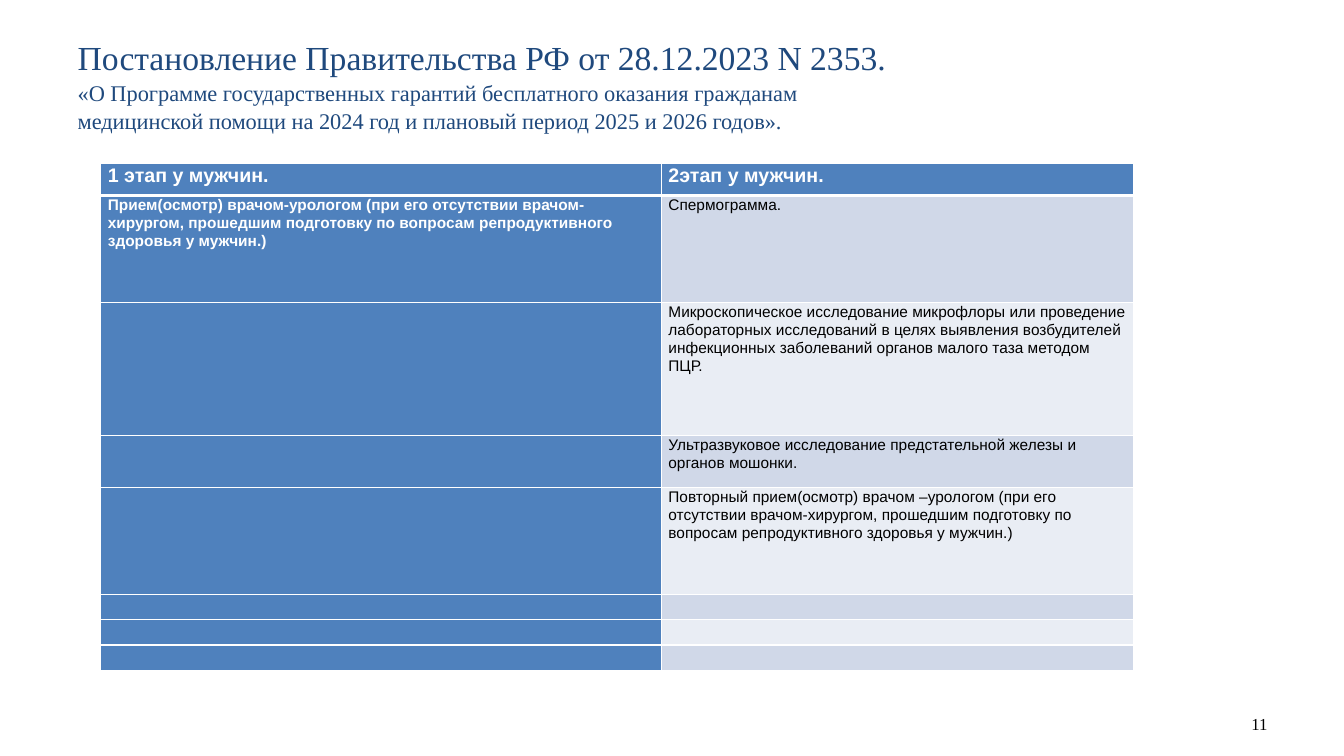
from copy import deepcopy

from lxml import etree
from pptx import Presentation
from pptx.dml.color import RGBColor
from pptx.enum.text import MSO_ANCHOR, PP_ALIGN
from pptx.oxml.ns import qn
from pptx.util import Inches, Pt

TOP, BOTTOM = MSO_ANCHOR.TOP, MSO_ANCHOR.BOTTOM
LEFT, RIGHT = PP_ALIGN.LEFT, PP_ALIGN.RIGHT
NAVY = RGBColor(0x1F, 0x49, 0x7D)
BLUE = RGBColor(0x4F, 0x81, 0xBD)
BAND_DARK = RGBColor(0xD0, 0xD8, 0xE8)
BAND_LIGHT = RGBColor(0xE9, 0xED, 0xF4)
WHITE = RGBColor(0xFF, 0xFF, 0xFF)
BLACK = RGBColor(0x00, 0x00, 0x00)
SERIF, SANS = "Times New Roman", "Arial"

HEADING = [
    ("Постановление Правительства РФ от 28.12.2023 N 2353.", 24),
    ("«О Программе государственных гарантий бесплатного оказания гражданам", 16),
    ("медицинской помощи на 2024 год и плановый период 2025 и 2026 годов».", 16),
]
STAGES = [
    ("1 этап у мужчин.", "2этап у мужчин."),
    ("Прием(осмотр) врачом-урологом (при его отсутствии врачом-хирургом, "
     "прошедшим подготовку по вопросам репродуктивного здоровья у мужчин.)",
     "Спермограмма."),
    ("", "Микроскопическое исследование микрофлоры или проведение лабораторных "
     "исследований в целях выявления возбудителей инфекционных заболеваний "
     "органов малого таза методом ПЦР."),
    ("", "Ультразвуковое исследование предстательной железы и органов мошонки."),
    ("", "Повторный прием(осмотр) врачом –урологом (при его отсутствии "
     "врачом-хирургом, прошедшим подготовку по вопросам репродуктивного "
     "здоровья у мужчин.)"),
    ("", ""),
    ("", ""),
    ("", ""),
]
COLUMN_WIDTHS = [5.56, 4.68]
ROW_HEIGHTS = [0.32, 1.06, 1.32, 0.52, 1.06, 0.25, 0.25, 0.25]


class StageSlide:
    """Hold the slide and the shared style of its heading, table and number."""

    def __init__(self, deck):
        self.slide = deck.slides.add_slide(deck.slide_layouts[5])

    def apply(self, target, **formats):
        for attribute, value in formats.items():
            setattr(target, attribute, value)

    def add_text(self, paragraph, text, size, color, name, bold=False):
        run = paragraph.add_run()
        run.text = text
        self.apply(run.font, size=Pt(size), name=name, bold=bold)
        run.font.color.rgb = color
        return run

    def heading(self, lines, left, top, width, height):
        title = self.slide.shapes.title
        self.apply(title, left=Inches(left), top=Inches(top),
                   width=Inches(width), height=Inches(height))
        self.apply(title.text_frame, word_wrap=True, vertical_anchor=TOP)
        paragraph = title.text_frame.paragraphs[0]
        self.apply(paragraph, alignment=LEFT, line_spacing=1.05)
        for index, (text, size) in enumerate(lines):
            run = self.add_text(paragraph, text, size, NAVY, SERIF)
            if index < len(lines) - 1:
                paragraph.add_line_break()
                line_break = paragraph._p.findall(qn("a:br"))[-1]
                line_break.append(deepcopy(run._r.find(qn("a:rPr"))))

    def border(self, cell, side, points):
        line = etree.SubElement(cell._tc.get_or_add_tcPr(), qn(f"a:ln{side}"),
                                w=str(Pt(points)))
        fill = etree.SubElement(line, qn("a:solidFill"))
        etree.SubElement(fill, qn("a:srgbClr"), val=str(WHITE))

    def cell(self, cell, text, row, column):
        for side in "LRTB":
            under_header = (row, side) in ((0, "B"), (1, "T"))
            self.border(cell, side, 3 if under_header else 1)
        accent = row == 0 or column == 0
        cell.fill.solid()
        cell.fill.fore_color.rgb = (
            BLUE if accent else BAND_DARK if row % 2 else BAND_LIGHT)
        self.apply(cell, margin_left=Inches(0.07), margin_right=Inches(0.07),
                   margin_top=0, margin_bottom=0)
        paragraph = cell.text_frame.paragraphs[0]
        paragraph.line_spacing = 1.06
        if text:
            self.add_text(paragraph, text, 11 if row else 14,
                          WHITE if accent else BLACK, SANS, accent)
        else:
            etree.SubElement(paragraph._p, qn("a:endParaRPr"), sz="1100")

    def table(self, rows, left, top):
        table = self.slide.shapes.add_table(
            len(rows), len(COLUMN_WIDTHS), Inches(left), Inches(top),
            Inches(sum(COLUMN_WIDTHS)), Inches(sum(ROW_HEIGHTS))).table
        for column, width in zip(table.columns, COLUMN_WIDTHS):
            column.width = Inches(width)
        for row, height in zip(table.rows, ROW_HEIGHTS):
            row.height = Inches(height)
        for row, texts in enumerate(rows):
            for column, text in enumerate(texts):
                self.cell(table.cell(row, column), text, row, column)

    def page_number(self, number, left, top, width, height):
        frame = self.slide.shapes.add_textbox(
            Inches(left), Inches(top), Inches(width), Inches(height)).text_frame
        self.apply(frame, word_wrap=True, vertical_anchor=BOTTOM)
        frame.paragraphs[0].alignment = RIGHT
        self.add_text(frame.paragraphs[0], number, 12, BLACK, SERIF)


def main():
    deck = Presentation()
    deck.slide_width, deck.slide_height = Inches(13.33), Inches(7.5)
    stages = StageSlide(deck)
    stages.heading(HEADING, 0.67, 0.3, 12, 1.25)
    stages.table(STAGES, 1, 1.62)
    stages.page_number("11", 9.56, 6.83, 3.11, 0.5)
    deck.save("out.pptx")


if __name__ == "__main__":
    main()
